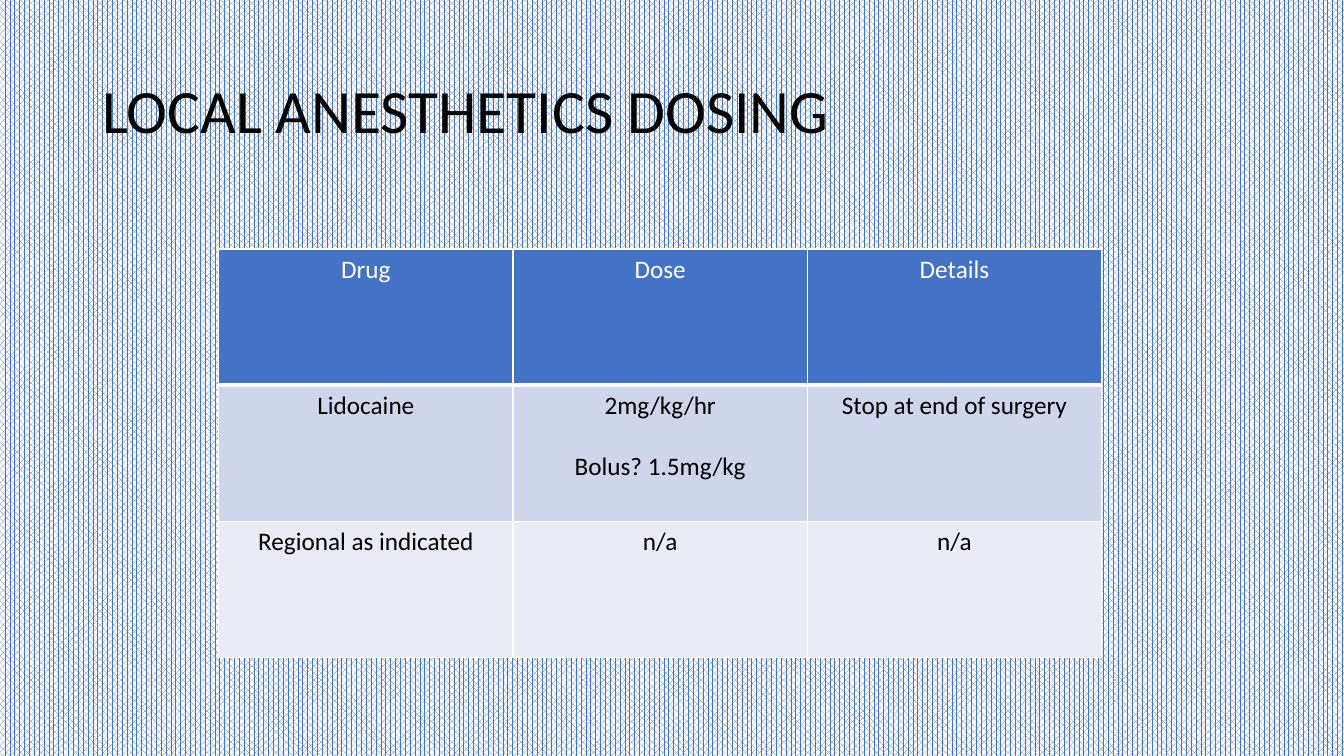
from dataclasses import dataclass

from lxml import etree
from pptx import Presentation
from pptx import util as u
from pptx.dml import color
from pptx.enum import dml, text
from pptx.oxml import ns


@dataclass(frozen=True)
class Theme:
    font: str = "Calibri"
    title_size: int = 44
    cell_size: int = 18
    paragraph_gap: int = 22
    border: float = 1
    header_border: float = 3
    accent: str = "4472C4"
    white: str = "FFFFFF"
    black: str = "000000"
    bands: tuple = ("CFD5EA", "E9EBF5")


@dataclass(frozen=True)
class Box:
    left: float
    top: float
    width: float
    height: float

    def lengths(self):
        return [u.Pt(value) for value in (self.left, self.top, self.width, self.height)]


THEME = Theme()
TITLE_BOX = Box(66, 28.8, 828, 104.4)
TABLE_BOX = Box(156.24, 177.84, 630.72, 291.6)

# Each cell is a list of paragraphs; the first row is the header
DOSING = [
    [["Drug"], ["Dose"], ["Details"]],
    [["Lidocaine"], ["2mg/kg/hr", "Bolus? 1.5mg/kg"], ["Stop at end of surgery"]],
    [["Regional as indicated"], ["n/a"], ["n/a"]],
]


def rgb(value):
    return color.RGBColor.from_string(value)


def add_run(paragraph, words, size, ink):
    run = paragraph.add_run()
    run.text = words
    run.font.name = THEME.font
    run.font.size = u.Pt(size)
    run.font.bold = False
    run.font.color.rgb = rgb(ink)


def set_borders(cell, bottom_width):
    properties = cell._tc.get_or_add_tcPr()
    widths = {"a:lnL": THEME.border, "a:lnR": THEME.border,
              "a:lnT": THEME.border, "a:lnB": bottom_width}
    for tag, width in widths.items():
        line = etree.SubElement(properties, ns.qn(tag), w=str(u.Pt(width)))
        fill = etree.SubElement(line, ns.qn("a:solidFill"))
        etree.SubElement(fill, ns.qn("a:srgbClr"), val=THEME.white)


# Background pattern
def paint_background(slide):
    fill = slide.background.fill
    fill.patterned()
    fill.pattern = dml.MSO_PATTERN.PERCENT_70
    fill.fore_color.rgb = rgb(THEME.accent)
    fill.back_color.rgb = rgb(THEME.white)


# Title
def add_title(slide, box, words):
    frame = slide.shapes.add_textbox(*box.lengths()).text_frame
    frame.word_wrap = True
    frame.vertical_anchor = text.MSO_ANCHOR.MIDDLE
    paragraph = frame.paragraphs[0]
    paragraph.line_spacing = 0.9
    add_run(paragraph, words, THEME.title_size, THEME.black)


# One table cell
def fill_cell(cell, lines, background, ink, bottom_width):
    set_borders(cell, bottom_width)
    cell.fill.solid()
    cell.fill.fore_color.rgb = rgb(background)
    frame = cell.text_frame
    for index, words in enumerate(lines):
        paragraph = frame.add_paragraph() if index else frame.paragraphs[0]
        paragraph.alignment = text.PP_ALIGN.CENTER
        if index:
            paragraph.space_before = u.Pt(THEME.paragraph_gap)
        add_run(paragraph, words, THEME.cell_size, ink)


# Dosing table with equal columns and rows
def add_dosing_table(slide, box, rows):
    table = slide.shapes.add_table(len(rows), len(rows[0]), *box.lengths()).table
    table.horz_banding = False
    for column in table.columns:
        column.width = u.Pt(box.width / len(rows[0]))
    for row_index, row in enumerate(rows):
        table.rows[row_index].height = u.Pt(box.height / len(rows))
        if row_index == 0:
            style = THEME.accent, THEME.white, THEME.header_border
        else:
            band = THEME.bands[(row_index - 1) % len(THEME.bands)]
            style = band, THEME.black, THEME.border
        for column_index, lines in enumerate(row):
            fill_cell(table.cell(row_index, column_index), lines, *style)


def main():
    presentation = Presentation()
    presentation.slide_width = u.Pt(960)
    presentation.slide_height = u.Pt(540)
    slide = presentation.slides.add_slide(presentation.slide_layouts[6])
    paint_background(slide)
    add_title(slide, TITLE_BOX, "LOCAL ANESTHETICS DOSING")
    add_dosing_table(slide, TABLE_BOX, DOSING)
    presentation.save("out.pptx")


if __name__ == "__main__":
    main()
